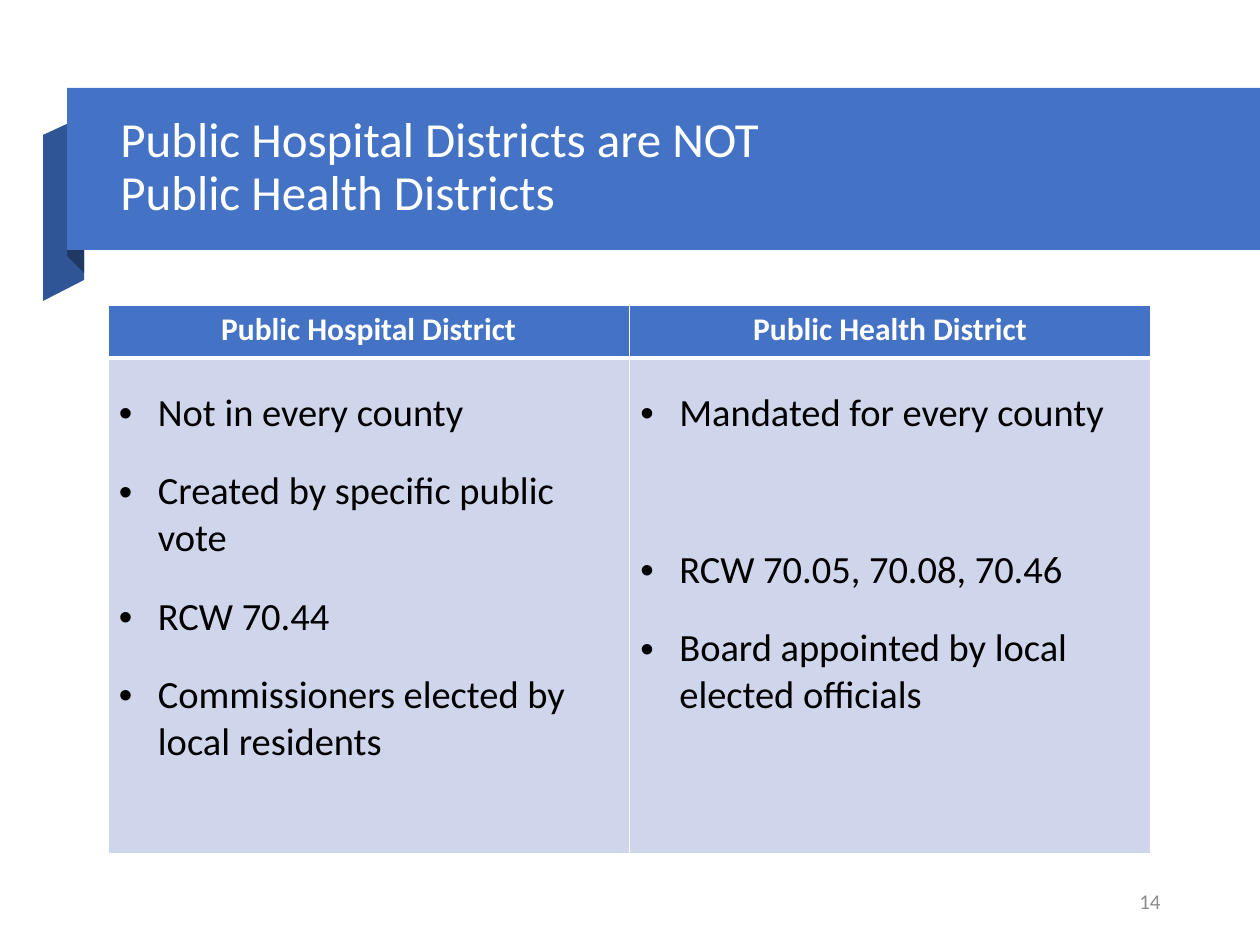
from lxml import etree
from pptx import Presentation
from pptx.dml.color import RGBColor
from pptx.enum.shapes import MSO_SHAPE
from pptx.enum.text import MSO_ANCHOR, PP_ALIGN
from pptx.oxml.ns import qn
from pptx.util import Pt

EMU_PER_PX = 914400 / 126
RECTANGLE = MSO_SHAPE.RECTANGLE
MIDDLE, TOP = MSO_ANCHOR.MIDDLE, MSO_ANCHOR.TOP
LEFT, CENTER, RIGHT = PP_ALIGN.LEFT, PP_ALIGN.CENTER, PP_ALIGN.RIGHT

WHITE = RGBColor(0xFF, 0xFF, 0xFF)
BLACK = RGBColor(0x00, 0x00, 0x00)
GRAY = RGBColor(0x8C, 0x8C, 0x8C)
BLUE = RGBColor(0x44, 0x72, 0xC4)
FOLD_BLUE = RGBColor(0x2F, 0x55, 0x97)
DARK_BLUE = RGBColor(0x20, 0x38, 0x64)
PALE_BLUE = RGBColor(0xCF, 0xD5, 0xEA)

TITLE_FONT = {"name": "Calibri", "size": Pt(28), "bold": False}
HEADER_FONT = {"name": "Calibri", "size": Pt(18), "bold": True}
BODY_FONT = {"name": "Calibri", "size": Pt(22), "bold": False}
NUMBER_FONT = {"name": "Calibri", "size": Pt(12), "bold": False}

RIBBON_FOLDS = [
    ([(84, 280), (43, 301), (43, 135), (84, 116)], FOLD_BLUE),
    ([(84, 273), (67, 256), (67, 88), (84, 107)], DARK_BLUE),
]
BULLET_INDENT = 39
HEADER_HEIGHT, BODY_HEIGHT = 53, 496
DISTRICTS = [
    ("Public Hospital District", [
        ("Not in every county", 18),
        ("Created by specific public vote", 18),
        ("RCW 70.44", 18),
        ("Commissioners elected by local residents", 18),
    ]),
    ("Public Health District", [
        ("Mandated for every county", 63),
        ("RCW 70.05, 70.08, 70.46", 18),
        ("Board appointed by local elected officials", 18),
    ]),
]


def px(length):
    """Turn pixels into EMU."""
    return round(length * EMU_PER_PX)


def paint(shape, color):
    """Give a shape a flat fill without line or shadow."""
    shape.shadow.inherit = False
    shape.fill.solid()
    shape.fill.fore_color.rgb = color
    shape.line.fill.background()


def write(paragraph, text, font, color, alignment):
    """Put formatted text into a paragraph."""
    paragraph.text = text
    paragraph.alignment = alignment
    for run in paragraph.runs:
        for name, value in font.items():
            setattr(run.font, name, value)
        run.font.color.rgb = color


def add_ribbon(slide):
    """Draw the title band and its folded end."""
    for points, color in RIBBON_FOLDS:
        builder = slide.shapes.build_freeform(*points[0], scale=EMU_PER_PX)
        builder.add_line_segments(points[1:], close=True)
        paint(builder.convert_to_shape(), color)
    band = slide.shapes.add_shape(RECTANGLE, px(67), px(88), px(1193), px(162))
    paint(band, BLUE)


def add_text(slide, box, text, font, color, alignment):
    """Add a vertically centred text box and return its paragraph."""
    frame = slide.shapes.add_textbox(*map(px, box)).text_frame
    frame.word_wrap = True
    frame.vertical_anchor = MIDDLE
    paragraph = frame.paragraphs[0]
    write(paragraph, text, font, color, alignment)
    return paragraph


def style_cell(cell, color, widths, margin_top):
    """Set fill, margins and white borders of a cell."""
    cell.fill.solid()
    cell.fill.fore_color.rgb = color
    cell.vertical_anchor = TOP
    margins = {"left": 11, "top": margin_top, "right": 11, "bottom": 6}
    for side, margin in margins.items():
        setattr(cell, f"margin_{side}", px(margin))
    properties = cell._tc.get_or_add_tcPr()
    for position, (side, width) in enumerate(widths.items()):
        line = etree.Element(qn(f"a:ln{side}"), w=str(Pt(width)))
        fill = etree.SubElement(line, qn("a:solidFill"))
        etree.SubElement(fill, qn("a:srgbClr"), val=str(WHITE))
        properties.insert(position, line)


def add_bullets(frame, items):
    """Fill a text frame with bulleted paragraphs."""
    for index, (text, space_after) in enumerate(items):
        paragraph = frame.add_paragraph() if index else frame.paragraphs[0]
        properties = paragraph._p.get_or_add_pPr()
        properties.set("marL", str(px(BULLET_INDENT)))
        properties.set("indent", str(-px(BULLET_INDENT)))
        etree.SubElement(properties, qn("a:buFont"), typeface="Arial")
        etree.SubElement(properties, qn("a:buChar"), char="•")
        paragraph.space_after = Pt(space_after)
        write(paragraph, text, BODY_FONT, BLACK, LEFT)


def add_comparison(slide):
    """Add the table that compares the two districts."""
    frame = slide.shapes.add_table(
        2, len(DISTRICTS), px(108), px(305), px(1043), px(HEADER_HEIGHT + BODY_HEIGHT))
    table = frame.table
    table.horz_banding = False
    for row, height in zip(table.rows, (HEADER_HEIGHT, BODY_HEIGHT)):
        row.height = px(height)
    for column, (heading, items) in enumerate(DISTRICTS):
        header, body = table.cell(0, column), table.cell(1, column)
        style_cell(header, BLUE, {"L": 1, "R": 1, "T": 1, "B": 3}, 6)
        style_cell(body, PALE_BLUE, {"L": 1, "R": 1, "T": 3, "B": 1}, 32)
        write(header.text_frame.paragraphs[0], heading, HEADER_FONT, WHITE, CENTER)
        add_bullets(body.text_frame, items)


def main():
    """Build and save the slide."""
    presentation = Presentation()
    presentation.slide_width, presentation.slide_height = px(1260), px(945)
    slide = presentation.slides.add_slide(presentation.slide_layouts[6])
    add_ribbon(slide)
    title = add_text(
        slide, (108, 108, 1065, 121),
        "Public Hospital Districts are NOT \vPublic Health Districts",
        TITLE_FONT, WHITE, LEFT)
    title.line_spacing = 0.9
    add_comparison(slide)
    add_text(slide, (890, 876, 283, 50), "14", NUMBER_FONT, GRAY, RIGHT)
    presentation.save("out.pptx")


if __name__ == "__main__":
    main()
